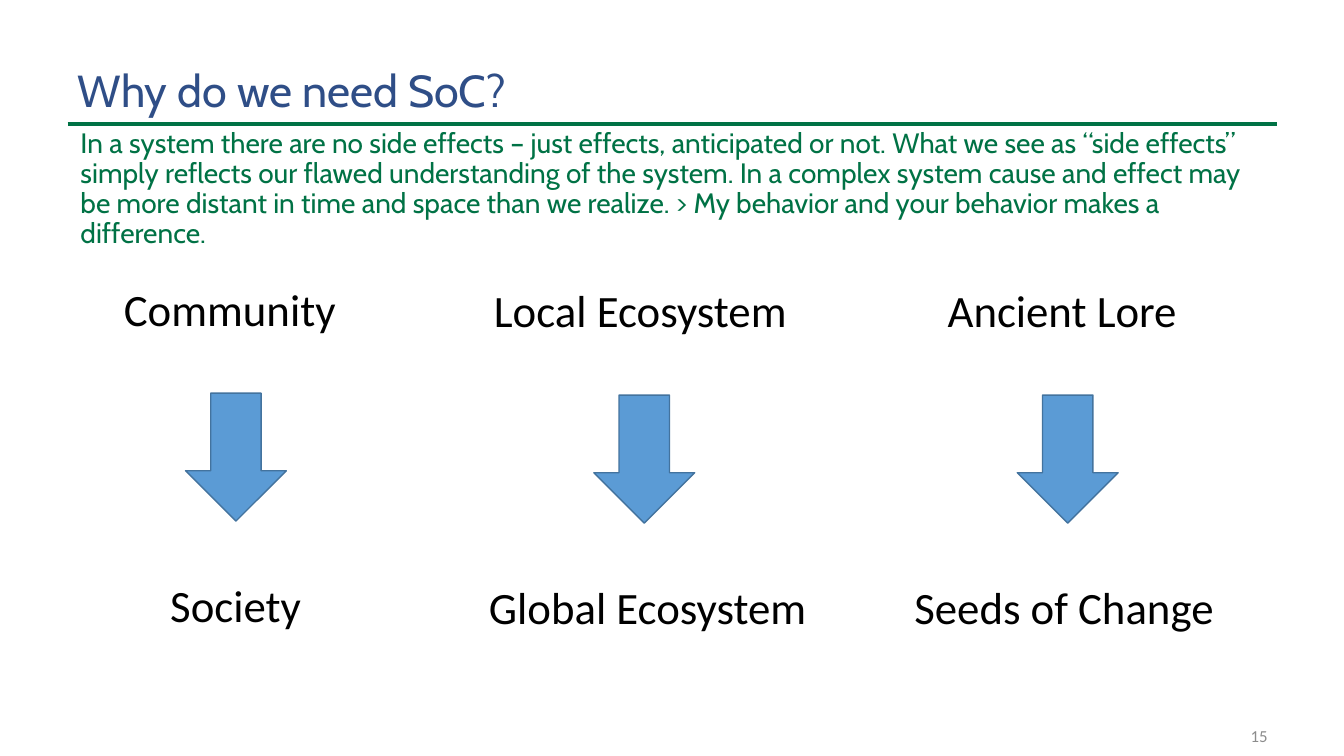
from dataclasses import dataclass

from lxml.etree import SubElement
from pptx import Presentation
from pptx.dml.color import RGBColor
from pptx.enum.shapes import MSO_CONNECTOR, MSO_SHAPE
from pptx.enum.text import MSO_ANCHOR, PP_ALIGN
from pptx.oxml.ns import qn
from pptx.slide import Slide
from pptx.util import Inches, Pt

GREEN = RGBColor(0x00, 0x72, 0x45)
NAVY = RGBColor(0x2F, 0x4E, 0x87)
BLUE = RGBColor(0x5B, 0x9B, 0xD5)
EDGE = RGBColor(0x43, 0x73, 0x9E)
GRAY = RGBColor(0x8C, 0x8C, 0x8C)
BLACK = RGBColor(0x00, 0x00, 0x00)

QUOTE = (
    "In a system there are no side effects – just effects, anticipated or not. "
    "What we see as “side effects” simply reflects our flawed understanding of the system. "
    "In a complex system cause and effect may be more distant in time and space than we realize. "
    "> My behavior and your behavior makes a difference."
)


@dataclass(frozen=True)
class Label:
    text: str
    left: float
    top: float
    width: float
    height: float = 0.64
    size: int = 32
    font: str = "Calibri"
    color: RGBColor = BLACK
    anchor: MSO_ANCHOR = MSO_ANCHOR.TOP
    align: PP_ALIGN = PP_ALIGN.LEFT
    spacing: float = 1.0
    wrap: bool = True


@dataclass(frozen=True)
class Arrow:
    left: float
    top: float


TEXTS = [
    Label("15", 9.56, 7.1, 3.11, 0.4, 12, color=GRAY,
          anchor=MSO_ANCHOR.MIDDLE, align=PP_ALIGN.RIGHT),
    Label("Why do we need SoC?", 0.67, 0.61, 10.92, 0.62, font="Cabin",
          color=NAVY, anchor=MSO_ANCHOR.MIDDLE, spacing=0.9),
    Label(QUOTE, 0.7, 1.23, 11.96, 0.77, 20, "Cabin", GREEN, spacing=0.9),
    Label("Community", 1.13, 2.75, 2.42, wrap=False),
    Label("Society", 1.59, 5.68, 1.5, wrap=False),
    Label("Local Ecosystem", 4.8, 2.76, 3.19, wrap=False),
    Label("Global Ecosystem", 4.75, 5.7, 3.41, wrap=False),
    Label("Ancient Lore", 9.3, 2.76, 2.59, wrap=False),
    Label("Seeds of Change", 8.97, 5.7, 3.41, wrap=False),
]

ARROWS = [Arrow(1.84, 3.9), Arrow(5.89, 3.92), Arrow(10.09, 3.92)]


def draw_rule(slide: Slide) -> None:
    rule = slide.shapes.add_connector(
        MSO_CONNECTOR.STRAIGHT, Inches(0.67), Inches(1.23), Inches(12.67), Inches(1.23))
    rule.line.color.rgb = GREEN
    rule.line.width = Pt(2.25)
    SubElement(rule.element.spPr, qn("a:effectLst"))


def draw_label(slide: Slide, label: Label) -> None:
    box = slide.shapes.add_textbox(
        Inches(label.left), Inches(label.top), Inches(label.width), Inches(label.height))
    frame = box.text_frame
    frame.text = label.text
    frame.word_wrap = label.wrap
    frame.vertical_anchor = label.anchor
    line = frame.paragraphs[0]
    line.alignment = label.align
    line.line_spacing = label.spacing
    font = line.runs[0].font
    font.name = label.font
    font.size = Pt(label.size)
    font.color.rgb = label.color


def draw_arrow(slide: Slide, arrow: Arrow) -> None:
    shape = slide.shapes.add_shape(
        MSO_SHAPE.DOWN_ARROW, Inches(arrow.left), Inches(arrow.top), Inches(1), Inches(1.27))
    shape.shadow.inherit = False
    shape.fill.solid()
    shape.fill.fore_color.rgb = BLUE
    shape.line.color.rgb = EDGE
    shape.line.width = Pt(1)


def main() -> None:
    deck = Presentation()
    deck.slide_width = Inches(13.33)
    deck.slide_height = Inches(7.5)
    slide = deck.slides.add_slide(deck.slide_layouts[6])
    draw_rule(slide)
    for label in TEXTS:
        draw_label(slide, label)
    for arrow in ARROWS:
        draw_arrow(slide, arrow)
    deck.save("out.pptx")


if __name__ == "__main__":
    main()
